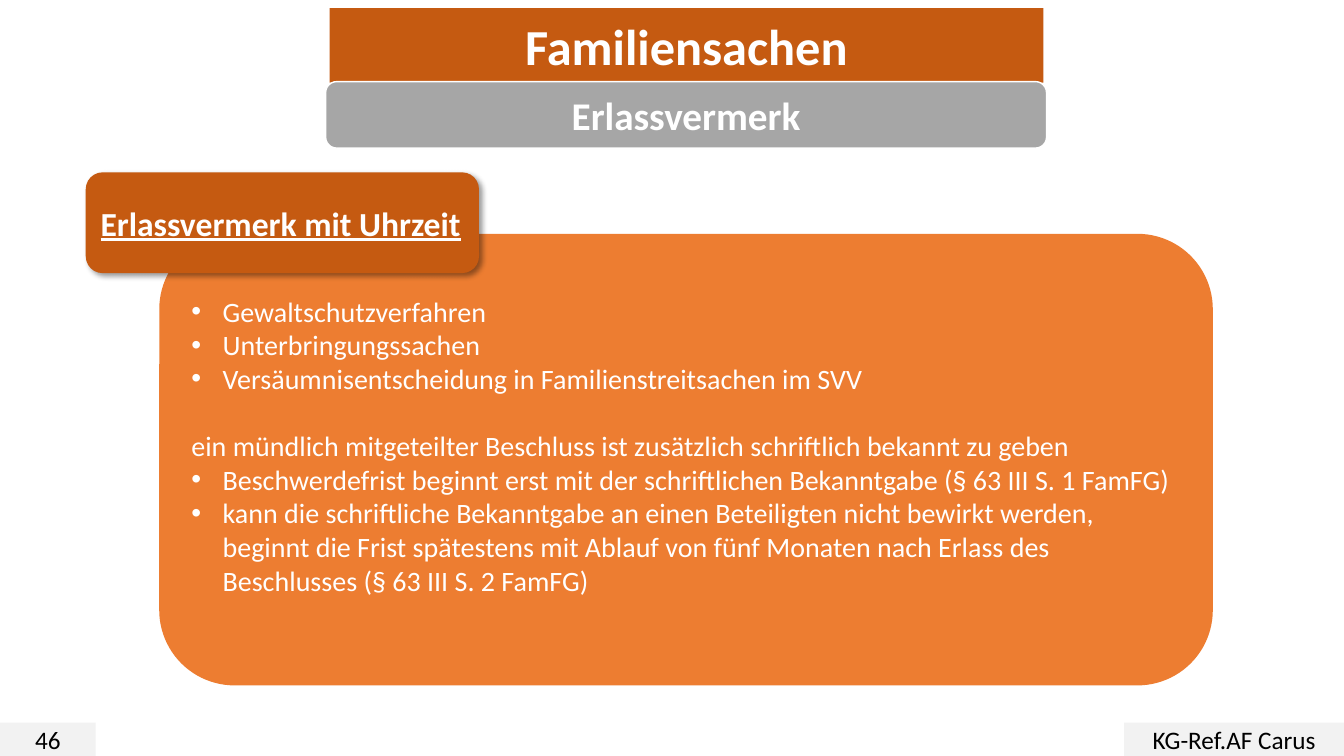
from lxml.etree import SubElement
from pptx import Presentation
from pptx.dml.color import RGBColor
from pptx.enum.shapes import MSO_SHAPE
from pptx.enum.text import MSO_ANCHOR, MSO_AUTO_SIZE, PP_ALIGN
from pptx.oxml import parse_xml
from pptx.oxml.ns import nsdecls, qn
from pptx.util import Inches, Pt

WIDE, HIGH = Inches(13.33), Inches(7.5)
RUST, ORANGE, GREY, PALE = "C55A11", "ED7D31", "A6A6A6", "F2F2F2"
WHITE, BLACK = "FFFFFF", "000000"
HANG = Inches(0.31)

HEAD = {"size": Pt(36), "bold": True}
SUB = {"size": Pt(28), "bold": True}
LABEL = {"size": Pt(24), "bold": True, "underline": True}
BODY = {"size": Pt(20), "bold": False}
FOOT = {"size": Pt(18)}

# Text and whether it is a bullet
ITEMS = [
    ("Gewaltschutzverfahren", True),
    ("Unterbringungssachen", True),
    ("Versäumnisentscheidung in Familienstreitsachen im SVV", True),
    ("ein mündlich mitgeteilter Beschluss ist zusätzlich schriftlich "
     "bekannt zu geben", False),
    ("Beschwerdefrist beginnt erst mit der schriftlichen Bekanntgabe "
     "(§ 63 III S. 1 FamFG)", True),
    ("kann die schriftliche Bekanntgabe an einen Beteiligten nicht bewirkt "
     "werden, beginnt die Frist spätestens mit Ablauf von fünf Monaten nach "
     "Erlass des Beschlusses (§ 63 III S. 2 FamFG)", True),
]


def color(code):
    return RGBColor.from_string(code)


def apply(item, look):
    for name, value in look.items():
        setattr(item, name, value)


def place(area):
    """Turn percent shares of the slide into left, top, width, height."""
    sides = (WIDE, HIGH, WIDE, HIGH)
    names = ("left", "top", "width", "height")
    return {n: round(s * a / 100) for n, s, a in zip(names, sides, area)}


def paint(shape, fill):
    shape.fill.solid()
    shape.fill.fore_color.rgb = color(fill)
    shape.line.fill.background()
    shape.shadow.inherit = False
    apply(shape.text_frame, {
        "word_wrap": True, "auto_size": MSO_AUTO_SIZE.NONE,
        "vertical_anchor": MSO_ANCHOR.MIDDLE})


def write(para, text, look, ink=WHITE, align=PP_ALIGN.CENTER):
    apply(para, {"alignment": align, "line_spacing": 1.0,
                 "space_before": Pt(0), "space_after": Pt(0)})
    run = para.add_run()
    run.text = text
    apply(run.font, {"name": "Calibri", **look})
    run.font.color.rgb = color(ink)


def box(slide, kind, area, fill, text, look, **style):
    shape = slide.shapes.add_shape(kind, **place(area))
    paint(shape, fill)
    write(shape.text_frame.paragraphs[0], text, look, **style)
    return shape


def holder(shape, area, fill):
    """Move a placeholder and give it rounded corners."""
    apply(shape, place(area))
    shape.element.spPr.insert(1, parse_xml(
        f'<a:prstGeom {nsdecls("a")} prst="roundRect"><a:avLst/></a:prstGeom>'))
    paint(shape, fill)
    return shape.text_frame


def bullet(para, on):
    props = para._p.get_or_add_pPr()
    props.set("marL", str(HANG if on else 0))
    props.set("indent", str(-HANG if on else 0))
    if on:
        SubElement(props, qn("a:buFont"), typeface="Arial")
        SubElement(props, qn("a:buChar"), char="•")
    else:
        SubElement(props, qn("a:buNone"))


def listing(frame, items):
    apply(frame, {"vertical_anchor": MSO_ANCHOR.TOP,
                  "margin_top": Inches(0.38)})
    for num, (text, on) in enumerate(items):
        para = frame.add_paragraph() if num else frame.paragraphs[0]
        write(para, text, BODY, align=PP_ALIGN.LEFT)
        if not on:
            para.space_before = Pt(24)
        bullet(para, on)


def shade(shape):
    effects = shape.element.spPr.find(qn("a:effectLst"))
    effects.append(parse_xml(
        f'<a:outerShdw {nsdecls("a")} blurRad="{Pt(4)}" dist="{Pt(3)}" '
        'dir="2700000" algn="tl" rotWithShape="0"><a:srgbClr val="000000">'
        '<a:alpha val="40000"/></a:srgbClr></a:outerShdw>'))


def main():
    deck = Presentation()
    apply(deck, {"slide_width": WIDE, "slide_height": HIGH})
    slide = deck.slides.add_slide(deck.slide_layouts[1])
    title, body = slide.placeholders
    card = MSO_SHAPE.ROUNDED_RECTANGLE

    # Heading and subheading
    frame = holder(title, (24.53, 1.07, 53.11, 9.87), RUST)
    write(frame.paragraphs[0], "Familiensachen", HEAD)
    sub = box(slide, card, (24.23, 10.8, 53.64, 8.8), GREY,
              "Erlassvermerk", SUB)
    sub.line.color.rgb = color(WHITE)
    sub.line.width = Pt(1)

    # Panel with its list and label
    listing(holder(body, (11.85, 30.93, 78.39, 59.73), ORANGE), ITEMS)
    label = box(slide, card, (6.38, 22.8, 29.26, 13.33), RUST,
                "Erlassvermerk mit Uhrzeit", LABEL, align=PP_ALIGN.LEFT)
    shade(label)

    # Footer
    for left, width, text in ((0, 7.13, "46"),
                              (83.65, 16.35, "KG-Ref.AF Carus")):
        box(slide, MSO_SHAPE.RECTANGLE, (left, 95.6, width, 4.4), PALE,
            text, FOOT, ink=BLACK)

    deck.save("out.pptx")


if __name__ == "__main__":
    main()
